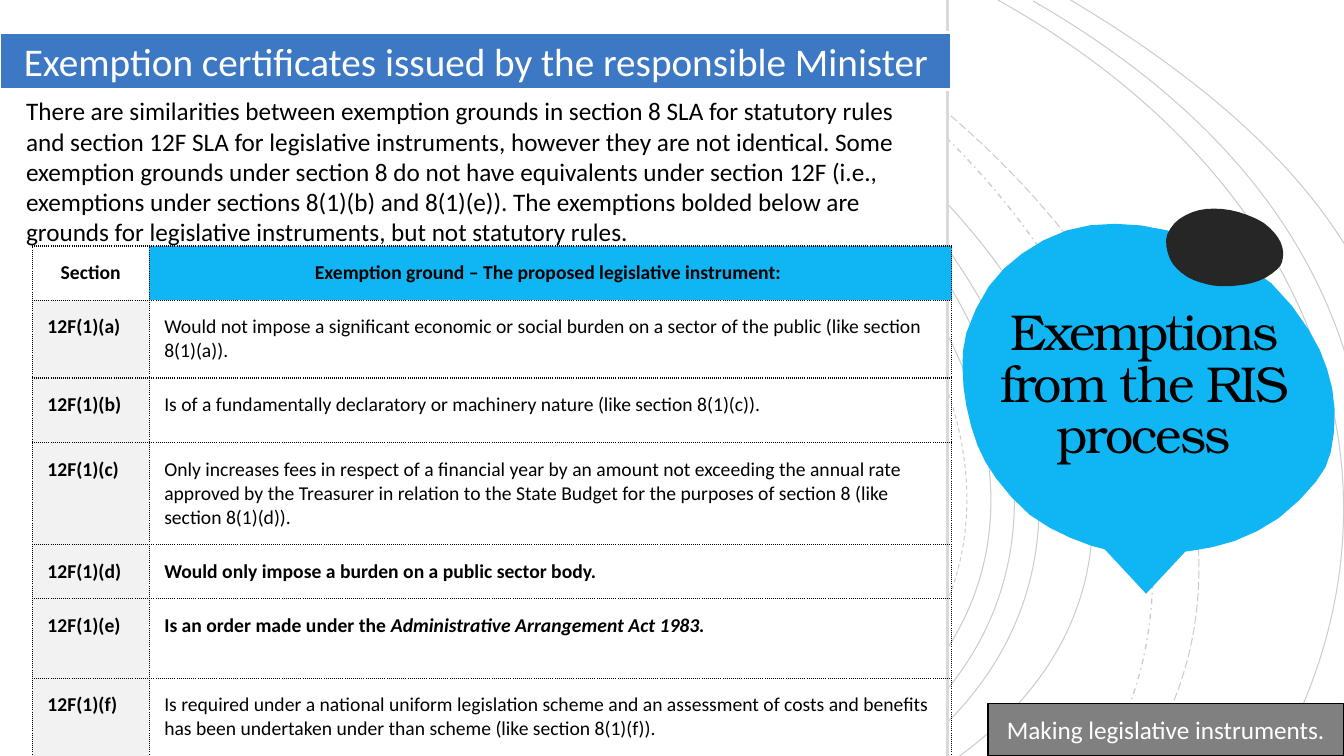
from lxml import etree
from pptx import Presentation
from pptx import util as u
from pptx.dml.color import RGBColor
from pptx.enum import dml, shapes, text
from pptx.oxml.ns import qn

COLORS = {"black": "000000", "white": "FFFFFF", "cyan": "10B6F4", "dark": "262626",
          "blue": "3C78C3", "grey": "808080", "pale": "F2F2F2", "rule": "D9D9D9"}
BODY, DISPLAY = "Calibri", "TeX Gyre Bonum"
SOLID, DASH = dml.MSO_LINE.SOLID, dml.MSO_LINE.DASH
DASH_DOT, LONG_DASH = dml.MSO_LINE.DASH_DOT, dml.MSO_LINE.LONG_DASH

ARCS = [
    ([(4.35, 0), (8.35, 1.15), (11.09, 5.41), (7.48, 7.5)], SOLID),
    ([(5, 0), (8.83, 1.25), (11.41, 5.39), (8.01, 7.5)], DASH),
    ([(5.3, 0), (9.07, 1.28), (11.62, 5.38), (8.28, 7.5)], SOLID),
    ([(5.96, 0), (9.48, 1.33), (11.62, 5.42), (8.68, 7.5)], SOLID),
    ([(6.18, 0), (9.69, 1.38), (11.82, 5.34), (9.02, 7.5)], SOLID),
    ([(6.55, 0), (9.9, 1.47), (12.53, 5.3), (9.52, 7.5)], SOLID),
    ([(7.58, 0), (10.56, 1.67), (12.33, 5.1), (10.97, 7.5)], DASH_DOT),
    ([(7.77, 0), (10.86, 1.69), (12.91, 5), (11.37, 7.5)], LONG_DASH),
    ([(9.9, 0), (13.2, 1.85), (14.1, 4.91), (12.68, 7.5)], SOLID),
    ([(10.25, 0.01), (11.9, 0.96), (12.92, 2.14), (13.35, 3.52)], SOLID),
    ([(10.62, 0), (11.78, 0.69), (12.77, 1.5), (13.35, 2.44)], SOLID),
]
BLOB = [(1, 55), (0, 44), (1, 33), (7, 19), (16, 9), (28, 2), (41, 0), (55, 2),
        (69, 8), (83, 18), (93, 32), (98, 44), (100, 56), (99, 69), (95, 78), (85, 89),
        (73, 96), (61, 99), (50, 100), (40, 99), (29, 95), (18, 88), (9, 77), (4, 67)]
INTRO = ("There are similarities between exemption grounds in section 8 SLA for statutory rules "
         "and section 12F SLA for legislative instruments, however they are not identical. "
         "Some exemption grounds under section 8 do not have equivalents under section 12F "
         "(i.e., exemptions under sections 8(1)(b) and 8(1)(e)). The exemptions bolded below "
         "are grounds for legislative instruments, but not statutory rules.")
HEADER = ("Section", "Exemption ground – The proposed legislative instrument: ")
GROUNDS = [
    ("12F(1)(a)", "Would not impose a significant economic or social burden on a sector of "
     "the public (like section 8(1)(a)).", "", False),
    ("12F(1)(b)", "Is of a fundamentally declaratory or machinery nature "
     "(like section 8(1)(c)).", "", False),
    ("12F(1)(c)", "Only increases fees in respect of a financial year by an amount not "
     "exceeding the annual rate approved by the Treasurer in relation to the State Budget "
     "for the purposes of section 8 (like section 8(1)(d)).", "", False),
    ("12F(1)(d)", "Would only impose a burden on a public sector body.", "", True),
    ("12F(1)(e)", "Is an order made under the ", "Administrative Arrangement Act 1983.", True),
    ("12F(1)(f)", "Is required under a national uniform legislation scheme and an assessment "
     "of costs and benefits has been undertaken under than scheme "
     "(like section 8(1)(f)).", "", False),
]
COLUMNS = [1.16, 7.96]
ROWS = [0.34, 0.49, 0.64, 0.49, 0.49, 0.79, 0.64]


def rgb(name):
    """Return a palette colour."""
    return RGBColor.from_string(COLORS[name])


def inches(box):
    """Turn numbers in inches into lengths."""
    return [u.Inches(v) for v in box]


def paint(sp, fill=None, line=None, width=1):
    """Set fill and outline and drop the shadow."""
    sp.shadow.inherit = False
    for part, color in ((sp.fill, fill), (sp.line.fill, line)):
        if color:
            part.solid()
            part.fore_color.rgb = rgb(color)
        else:
            part.background()
    if line:
        sp.line.width = u.Pt(width)
    return sp


def write(tf, parts, size, color="black", align=text.PP_ALIGN.LEFT, font=BODY, bold=False):
    """Fill the first paragraph with (text, italic) parts."""
    tf.word_wrap = True
    p = tf.paragraphs[0]
    p.alignment = align
    p.font.size, p.font.name, p.font.bold = u.Pt(size), font, bold
    p.font.color.rgb = rgb(color)
    for words, italic in parts:
        r = p.add_run()
        r.text = words
        if italic:
            r.font.italic = True
    return p


def outline(slide, points, close):
    """Draw a freeform through points in inches."""
    pts = [tuple(inches(pt)) for pt in points]
    builder = slide.shapes.build_freeform(*pts[0])
    builder.add_line_segments(pts[1:], close=close)
    return builder.convert_to_shape()


def add_arcs(slide):
    """Draw the faint background arcs, each one cubic curve."""
    for ends, dash in ARCS:
        sp = outline(slide, ends, False)
        lines = sp._element.xpath(".//a:lnTo")
        curve = etree.SubElement(lines[0].getparent(), qn("a:cubicBezTo"))
        for line in lines:
            curve.append(line[0])
            line.getparent().remove(line)
        paint(sp, line="black", width=1 if dash == DASH_DOT else 0.75)
        sp.line.dash_style = dash
        for clr in sp._element.xpath(".//a:ln//a:srgbClr"):
            etree.SubElement(clr, qn("a:alpha")).set("val", "20000")


def rounded(points):
    """Add a spline midpoint after each point of a closed loop."""
    n = len(points)
    loop = []
    for i in range(n):
        a, b, c, d = (points[(i + k) % n] for k in (-1, 0, 1, 2))
        middle = [(9 * (q + r) - p - s) / 16 for p, q, r, s in zip(a, b, c, d)]
        loop += [b, middle]
    return loop


def add_blob(slide, box, color):
    """Draw the pebble outline stretched to a box."""
    x, y, w, h = box
    points = [(x + w * px / 100, y + h * py / 100) for px, py in rounded(BLOB)]
    paint(outline(slide, points, True), color)


def add_block(slide, box, kind=shapes.MSO_SHAPE.RECTANGLE, **look):
    """Add a preset shape with its paint."""
    return paint(slide.shapes.add_shape(kind, *inches(box)), **look)


def add_backdrop(slide, w, h):
    """Place the arcs, speech bubble and white content panel."""
    add_arcs(slide)
    add_blob(slide, (9.55, 2.22, 3.69, 3.28), "cyan")
    tail = add_block(slide, (10.43, 4.88, 1.88, 1.01),
                     shapes.MSO_SHAPE.ISOSCELES_TRIANGLE, fill="cyan")
    tail.rotation = 180
    add_block(slide, (0, 0, w, h), fill="white")
    edge = slide.shapes.add_connector(shapes.MSO_CONNECTOR.STRAIGHT, *inches((w, 0, w, h)))
    edge.line.color.rgb, edge.line.width = rgb("rule"), u.Pt(1.5)
    etree.SubElement(edge._element.spPr, qn("a:effectLst"))
    add_blob(slide, (11.57, 2.07, 1.16, 0.77), "dark")


def style_cell(cell, fill):
    """Set margins, fill and dotted borders of a cell."""
    cell.margin_left = cell.margin_right = u.Inches(0.15)
    cell.margin_top = cell.margin_bottom = u.Inches(0.15)
    pr = cell._tc.get_or_add_tcPr()
    for side in ("lnL", "lnR", "lnT", "lnB"):
        ln = etree.SubElement(pr, qn("a:" + side), w=str(u.Pt(1)))
        solid = etree.SubElement(ln, qn("a:solidFill"))
        etree.SubElement(solid, qn("a:srgbClr"), val=COLORS["black"])
        etree.SubElement(ln, qn("a:prstDash"), val="dot")
    if fill:
        cell.fill.solid()
        cell.fill.fore_color.rgb = rgb(fill)
    else:
        cell.fill.background()


def add_grounds(slide, left, top):
    """Build the table of exemption grounds."""
    box = inches((left, top, sum(COLUMNS), sum(ROWS)))
    table = slide.shapes.add_table(len(ROWS), len(COLUMNS), *box).table
    table.first_row = table.horz_banding = False
    for column, width in zip(table.columns, COLUMNS):
        column.width = u.Inches(width)
    for row, height in zip(table.rows, ROWS):
        row.height = u.Inches(height)
    for cell, label, fill in zip(table.rows[0].cells, HEADER, (None, "cyan")):
        style_cell(cell, fill)
        cell.vertical_anchor = text.MSO_ANCHOR.MIDDLE
        write(cell.text_frame, [(label, False)], 14, align=text.PP_ALIGN.CENTER, bold=True)
    for i, (section, ground, act, bold) in enumerate(GROUNDS, 1):
        key, detail = table.cell(i, 0), table.cell(i, 1)
        style_cell(key, "pale")
        style_cell(detail, None)
        write(key.text_frame, [(section, False)], 14, bold=True)
        parts = [(ground, False)] + ([(act, True)] if act else [])
        write(detail.text_frame, parts, 14, bold=bold)


def add_texts(slide):
    """Place the footer, introduction, banner and bubble title."""
    center = text.PP_ALIGN.CENTER
    footer = add_block(slide, (9.8, 6.98, 3.53, 0.52), fill="grey", line="black", width=1.25)
    footer.text_frame.vertical_anchor = text.MSO_ANCHOR.TOP
    p = write(footer.text_frame, [("Making legislative instruments.", False)], 18, "white", center)
    p.line_spacing, p.space_before = 1.2, u.Pt(10)
    add_grounds(slide, 0.32, 2.44)
    intro = slide.shapes.add_textbox(*inches((0.16, 0.9, 9.12, 2.22)))
    write(intro.text_frame, [(INTRO, False)], 18)
    banner = add_block(slide, (0, 0.32, 9.44, 0.57), fill="blue", line="white", width=2)
    write(banner.text_frame, [("Exemption certificates issued by the responsible Minister", False)],
          28, "white", center)
    tf = slide.shapes.add_textbox(*inches((9.44, 2.49, 3.81, 2.69))).text_frame
    tf.margin_left = tf.margin_right = tf.margin_top = tf.margin_bottom = u.Inches(0.25)
    tf.vertical_anchor = text.MSO_ANCHOR.MIDDLE
    p = write(tf, [("Exemptions from the RIS process", False)], 36, align=center, font=DISPLAY)
    p.line_spacing = 0.85
    p.runs[0]._r.get_or_add_rPr().set("spc", "-150")


def main():
    """Build and save the slide."""
    prs = Presentation()
    prs.slide_width, prs.slide_height = inches((40 / 3, 7.5))
    slide = prs.slides.add_slide(prs.slide_layouts[6])
    add_backdrop(slide, 9.4, 7.5)
    add_texts(slide)
    prs.save("out.pptx")


if __name__ == "__main__":
    main()
